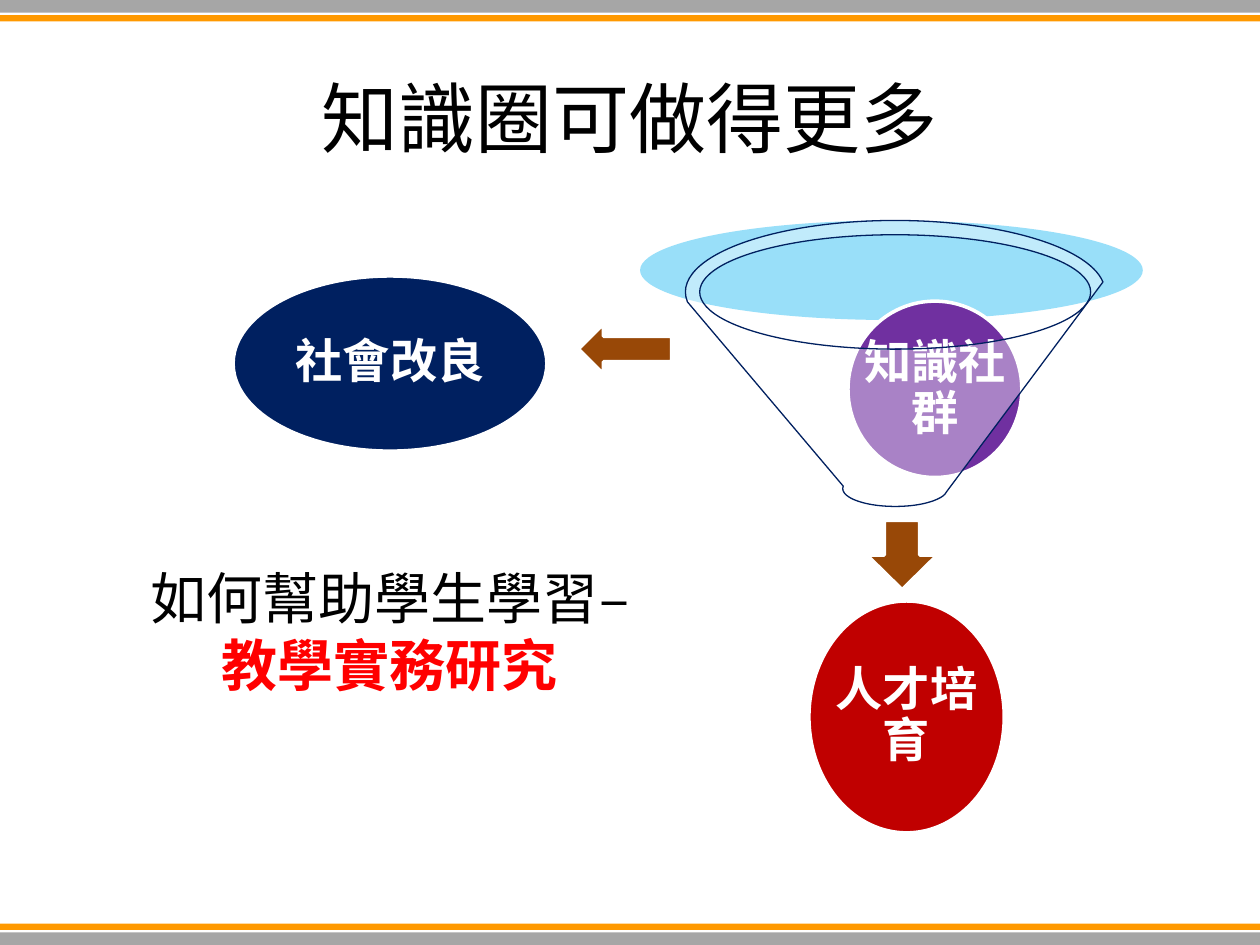
from lxml import etree
from pptx import Presentation
from pptx import util as u
from pptx.dml.color import RGBColor
from pptx.enum import shapes, text
from pptx.oxml import ns

BLACK = RGBColor(0x00, 0x00, 0x00)
WHITE = RGBColor(0xFF, 0xFF, 0xFF)
GREY = RGBColor(0xA6, 0xA6, 0xA6)
ORANGE = RGBColor(0xFF, 0x99, 0x00)
SKY = RGBColor(0x00, 0xB0, 0xF0)
BROWN = RGBColor(0x98, 0x48, 0x07)
PURPLE = RGBColor(0x70, 0x30, 0xA0)
NAVY = RGBColor(0x00, 0x20, 0x60)
CRIMSON = RGBColor(0xC0, 0x00, 0x00)
RED = RGBColor(0xFF, 0x00, 0x00)

SANS_SC = "Noto Sans CJK SC"
SANS_TC = "Noto Sans CJK TC"
KIND = shapes.MSO_SHAPE


class SlidePainter:
    """Hold the slide style and draw each kind of element on the current page."""

    title_format = {"size": u.Pt(44), "name": SANS_SC, "bold": False}
    prose_format = {"size": u.Pt(32), "name": SANS_SC, "bold": False}
    label_format = {"size": u.Pt(27), "name": "Calibri", "bold": True}

    def __init__(self, page):
        self.page = page

    def place(self, box, at):
        names = ("left", "top", "width", "height")
        for name, length in zip(names, at):
            setattr(box, name, u.Inches(length))

    def shape(self, kind, at, fill, line=None, weight=2, alpha=None, rotation=0):
        shape = self.page.shapes.add_shape(kind, *map(u.Inches, at))
        shape.shadow.inherit = False
        shape.rotation = rotation
        shape.fill.solid()
        shape.fill.fore_color.rgb = fill
        if alpha is not None:
            color = shape._element.spPr.find(".//" + ns.qn("a:srgbClr"))
            etree.SubElement(color, ns.qn("a:alpha"), val=str(alpha * 1000))
        if line is None:
            shape.line.fill.background()
        else:
            shape.line.color.rgb = line
            shape.line.width = u.Pt(weight)

    def span(self, para, words, style, color=BLACK, **changes):
        span = para.add_run()
        span.text = words
        values = {**style, **changes}
        for name, value in values.items():
            setattr(span.font, name, value)
        span.font.color.rgb = color
        properties = span.font._element
        etree.SubElement(properties, ns.qn("a:ea"), typeface=values["name"])

    def title(self, words, at):
        box = self.page.shapes.title
        self.place(box, at)
        box.text_frame.vertical_anchor = text.MSO_ANCHOR.MIDDLE
        para = box.text_frame.paragraphs[0]
        para.alignment = text.PP_ALIGN.CENTER
        self.span(para, words, self.title_format)

    def text_box(self, at, inset, lines, style):
        frame = self.page.shapes.add_textbox(*map(u.Inches, at)).text_frame
        frame.word_wrap = True
        frame.vertical_anchor = text.MSO_ANCHOR.MIDDLE
        for side in ("left", "top", "right", "bottom"):
            setattr(frame, "margin_" + side, u.Inches(inset))
        for index, spans in enumerate(lines):
            para = frame.add_paragraph() if index else frame.paragraphs[0]
            para.alignment = text.PP_ALIGN.CENTER
            para.line_spacing = 0.9
            para.space_after = u.Pt(4)
            for words, changes in spans:
                self.span(para, words, style, **changes)

    def bubble(self, words, at, fill):
        self.shape(KIND.OVAL, at, fill, WHITE)
        self.text_box(at, 0.04, [[(words, {"color": WHITE})]], self.label_format)

    def arrow(self, at, rotation=0):
        self.shape(KIND.DOWN_ARROW, at, BROWN, WHITE, rotation=rotation)


def main():
    deck = Presentation()
    deck.slide_width, deck.slide_height = u.Inches(10), u.Inches(7.5)
    painter = SlidePainter(deck.slides.add_slide(deck.slide_layouts[5]))

    for top, height, color in (
        (0, 0.1, GREY),
        (0.12, 0.05, ORANGE),
        (7.33, 0.05, ORANGE),
        (7.4, 0.1, GREY),
    ):
        painter.shape(KIND.RECTANGLE, (0, top, 10, height), color)

    painter.title("知識圈可做得更多", (0.5, 0.3, 9, 1.25))
    painter.shape(KIND.OVAL, (5.08, 1.75, 3.99, 0.79), SKY, alpha=40)
    painter.arrow((6.88, 4.13, 0.56, 0.55))
    question = [
        [("如何幫助學生學習", {}), ("–", {"name": SANS_TC})],
        [("教學實務研究", {"name": SANS_TC, "bold": True, "color": RED})],
    ]
    painter.text_box((0.83, 4.18, 4.53, 1.72), 0.25, question, painter.prose_format)

    for words, at, fill in (
        ("知識社群", (6.73, 2.39, 1.38, 1.4), PURPLE),
        ("社會改良", (1.85, 2.19, 2.49, 1.39), NAVY),
        ("人才培育", (6.42, 4.77, 1.55, 1.84), CRIMSON),
    ):
        painter.bubble(words, at, fill)

    painter.shape(KIND.FUNNEL, (5.44, 1.75, 3.33, 2.27), WHITE, NAVY, 0.75, alpha=40)
    painter.arrow((4.76, 2.4, 0.4, 0.74), rotation=90)
    deck.save("out.pptx")


if __name__ == "__main__":
    main()
